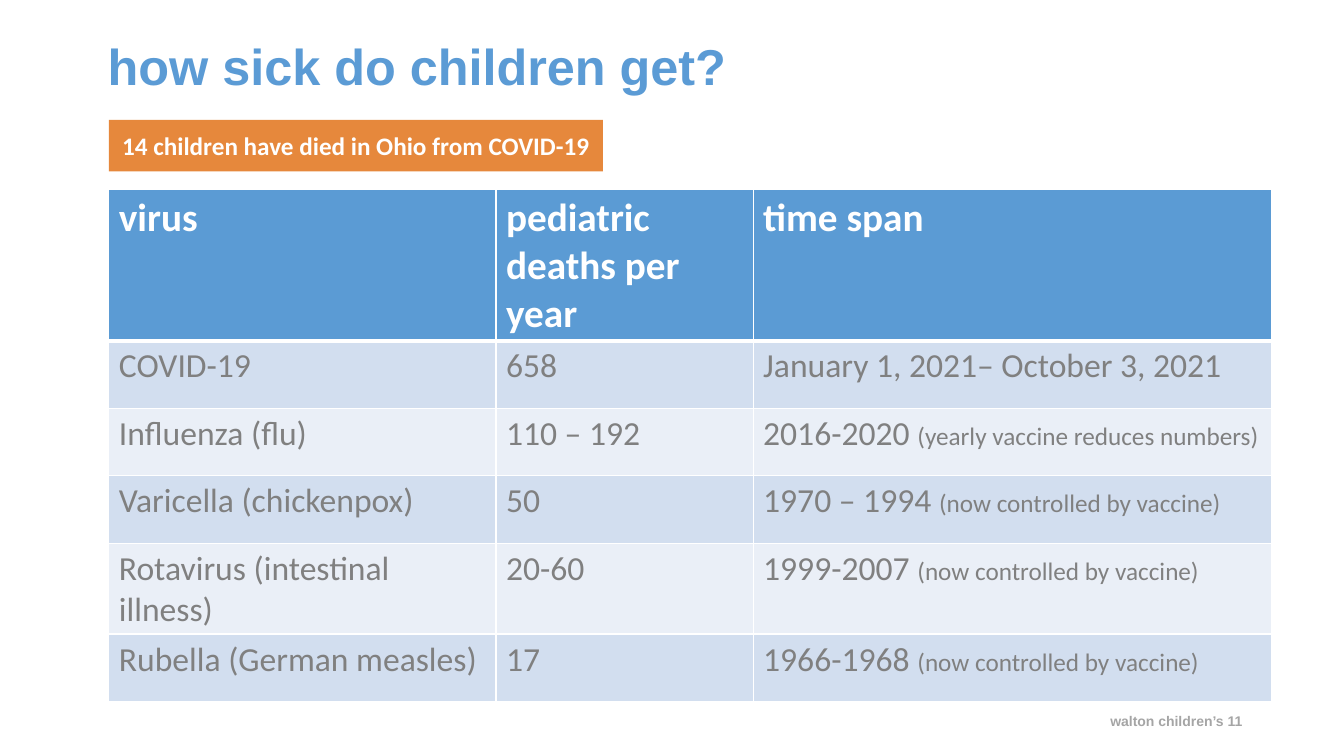
from lxml import etree
from pptx import Presentation
from pptx import util as u
from pptx.dml.color import RGBColor
from pptx.enum import shapes, text
from pptx.oxml import ns

WHITE = RGBColor(0xFF, 0xFF, 0xFF)
TITLE_BLUE = RGBColor(0x5B, 0x9B, 0xD5)
HEADER_BLUE = RGBColor(0x5B, 0x9B, 0xD4)
BAND_DARK = RGBColor(0xD2, 0xDE, 0xEF)
BAND_LIGHT = RGBColor(0xEA, 0xEF, 0xF7)
ORANGE = RGBColor(0xE6, 0x88, 0x3C)
BODY_GRAY = RGBColor(0x80, 0x80, 0x80)
FOOTER_GRAY = RGBColor(0xA5, 0xA5, 0xA5)

TITLE_FORMAT = {"name": "Arial", "size": u.Pt(36), "bold": True}
FOOTER_FORMAT = {"name": "Arial", "size": u.Pt(10), "bold": True}
CALLOUT_FORMAT = {"name": "Calibri", "size": u.Pt(18), "bold": True}
HEADER_FORMAT = {"name": "Calibri", "size": u.Pt(28), "bold": True}
BODY_FORMAT = {"name": "Calibri", "size": u.Pt(24), "bold": False}
NOTE_FORMAT = {"name": "Calibri", "size": u.Pt(18), "bold": False}

CONTROLLED = "(now controlled by vaccine)"
HEADINGS = ["virus", "pediatric deaths per year", "time span"]
VIRUSES = [
    ("COVID-19", "658", "January 1, 2021– October 3, 2021", ""),
    ("Influenza (flu)", "110 – 192", "2016-2020 ", "(yearly vaccine reduces numbers)"),
    ("Varicella (chickenpox)", "50", "1970 – 1994 ", CONTROLLED),
    ("Rotavirus (intestinal illness)", "20-60", "1999-2007 ", CONTROLLED),
    ("Rubella (German measles)", "17", "1966-1968 ", CONTROLLED),
]
COLUMN_WIDTHS = [3.84, 2.55, 5.14]
ROW_HEIGHT = 0.67


def add_span(para, words, formats, color):
    span = para.add_run()
    span.text = words
    for name, value in formats.items():
        setattr(span.font, name, value)
    span.font.color.rgb = color


def inches(box):
    return [u.Inches(length) for length in box]


def add_text(slide, box, words, formats, color, anchor, align):
    frame = slide.shapes.add_textbox(*inches(box)).text_frame
    frame.word_wrap = True
    frame.vertical_anchor = anchor
    para = frame.paragraphs[0]
    para.alignment = align
    add_span(para, words, formats, color)
    return para


def add_callout(slide, box, words):
    callout = slide.shapes.add_shape(shapes.MSO_SHAPE.RECTANGLE, *inches(box))
    callout.shadow.inherit = False
    callout.fill.solid()
    callout.fill.fore_color.rgb = ORANGE
    callout.line.fill.background()
    frame = callout.text_frame
    frame.word_wrap = True
    frame.vertical_anchor = text.MSO_ANCHOR.MIDDLE
    frame.margin_left = frame.margin_right = u.Inches(0.07)
    frame.margin_top = frame.margin_bottom = u.Inches(0.04)
    para = frame.paragraphs[0]
    para.alignment = text.PP_ALIGN.CENTER
    add_span(para, words, CALLOUT_FORMAT, WHITE)


def add_borders(cell, top, bottom):
    properties = cell._tc.get_or_add_tcPr()
    for side, points in (("L", 1), ("R", 1), ("T", top), ("B", bottom)):
        line = etree.SubElement(properties, ns.qn(f"a:ln{side}"), w=str(u.Pt(points)))
        fill = etree.SubElement(line, ns.qn("a:solidFill"))
        etree.SubElement(fill, ns.qn("a:srgbClr"), val=str(WHITE))


def fill_cell(cell, row, spans):
    add_borders(cell, 3 if row == 1 else 1, 3 if row == 0 else 1)
    cell.fill.solid()
    band = BAND_DARK if row % 2 else BAND_LIGHT
    cell.fill.fore_color.rgb = band if row else HEADER_BLUE
    for words, formats in spans:
        if words:
            add_span(cell.text_frame.paragraphs[0], words, formats,
                     BODY_GRAY if row else WHITE)


def add_virus_table(slide, left, top):
    rows = [[[(heading, HEADER_FORMAT)] for heading in HEADINGS]]
    for virus, deaths, period, note in VIRUSES:
        rows.append([[(virus, BODY_FORMAT)], [(deaths, BODY_FORMAT)],
                     [(period, BODY_FORMAT), (note, NOTE_FORMAT)]])
    box = (left, top, sum(COLUMN_WIDTHS), ROW_HEIGHT * len(rows))
    table = slide.shapes.add_table(len(rows), len(HEADINGS), *inches(box)).table
    for column, width in zip(table.columns, COLUMN_WIDTHS):
        column.width = u.Inches(width)
    for row, cells in enumerate(rows):
        table.rows[row].height = u.Inches(ROW_HEIGHT)
        for column, spans in enumerate(cells):
            fill_cell(table.cell(row, column), row, spans)


def build_slide(deck):
    slide = deck.slides.add_slide(deck.slide_layouts[6])
    title = add_text(slide, (0.97, 0.21, 11.13, 0.8), "how sick do children get?",
                     TITLE_FORMAT, TITLE_BLUE, text.MSO_ANCHOR.BOTTOM,
                     text.PP_ALIGN.LEFT)
    title.line_spacing = 0.9
    add_text(slide, (9.42, 6.95, 3, 0.4), "walton children’s 11", FOOTER_FORMAT,
             FOOTER_GRAY, text.MSO_ANCHOR.MIDDLE, text.PP_ALIGN.RIGHT)
    add_virus_table(slide, 1.08, 1.88)
    add_callout(slide, (1.08, 1.19, 4.9, 0.51),
                "14 children have died in Ohio from COVID-19")


def main():
    deck = Presentation()
    deck.slide_width = u.Inches(13.33)
    deck.slide_height = u.Inches(7.5)
    build_slide(deck)
    deck.save("out.pptx")


if __name__ == "__main__":
    main()
